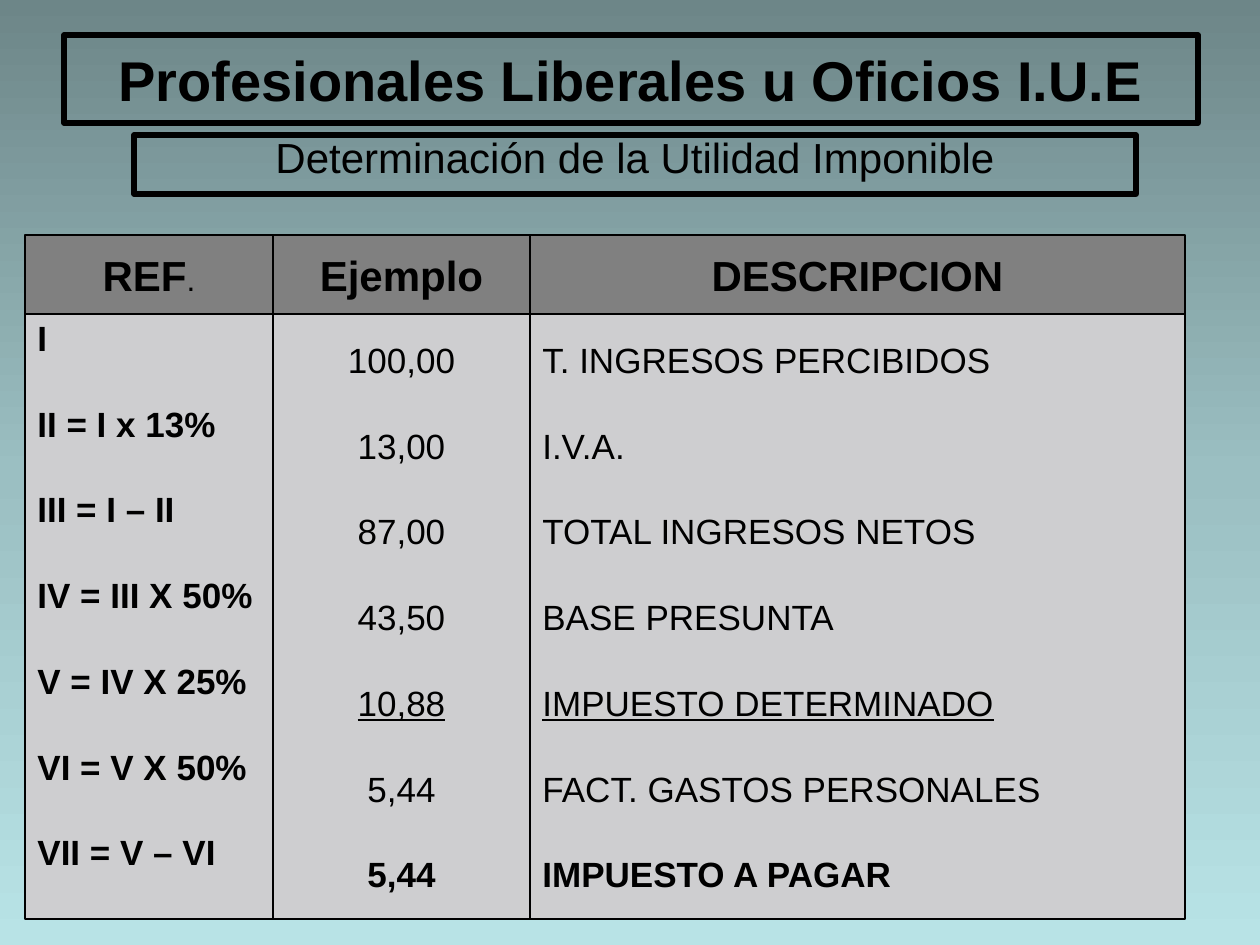
"""Build the slide that works out the taxable profit of independent professionals."""
from copy import deepcopy
from dataclasses import dataclass

from pptx import Presentation
from pptx import util as u
from pptx.dml.color import RGBColor
from pptx.enum import shapes, text
from pptx.oxml.ns import qn
from pptx.oxml.xmlchemy import OxmlElement

PX = 914400 / 126


@dataclass(frozen=True)
class Theme:
    font: str = "Arial"
    ink: str = "000000"
    header: str = "808080"
    panel: str = "CECED0"
    background: tuple = ("6D8688", "9BBFC2", "B8E3E6")
    title: int = 32
    heading: int = 24
    body: int = 20
    small: int = 18
    row_gap: int = 25
    frame: float = 3
    rule: float = 0.75


@dataclass(frozen=True)
class Run:
    text: str
    size: int
    bold: bool = False
    underline: bool = False


@dataclass(frozen=True)
class Box:
    left: int
    top: int
    width: int
    height: int


@dataclass(frozen=True)
class Column:
    left: int
    width: int
    heading: list
    rows: list
    align: text.PP_ALIGN
    bottom_inset: int = 6


T = Theme()
CENTER, LEFT = text.PP_ALIGN.CENTER, text.PP_ALIGN.LEFT
HEADER_TOP, HEADER_HEIGHT, BODY_HEIGHT = 235, 79, 605


def px(n: int) -> u.Emu:
    return u.Emu(round(n * PX))


def value_rows(*values: str) -> list:
    """Return plain rows with the fifth underlined and the last bold."""
    return [Run(v, T.body, i == len(values), i == 5) for i, v in enumerate(values, 1)]


COLUMNS = [
    Column(25, 248, [Run("REF", T.heading, True), Run(".", T.small)],
           [Run(v, T.body, True) for v in (
               "I", "II = I x 13%", "III = I – II", "IV = III X 50%",
               "V = IV X 25%", "VI = V X 50%", "VII = V – VI")],
           LEFT, 50),
    Column(273, 257, [Run("Ejemplo", T.heading, True)],
           value_rows("100,00", "13,00", "87,00", "43,50", "10,88", "5,44", "5,44"), CENTER),
    Column(530, 655, [Run("DESCRIPCION", T.heading, True)],
           value_rows("T. INGRESOS PERCIBIDOS", "I.V.A.", "TOTAL INGRESOS NETOS",
                      "BASE PRESUNTA", "IMPUESTO DETERMINADO",
                      "FACT. GASTOS PERSONALES", "IMPUESTO A PAGAR"), LEFT),
]


def outline(sp, width: float) -> None:
    sp.line.color.rgb = RGBColor.from_string(T.ink)
    sp.line.width = u.Pt(width)


def write(sp, paragraphs: list, align: text.PP_ALIGN, anchor: text.MSO_ANCHOR) -> None:
    """Fill a shape with paragraphs, each given as a list of runs."""
    tf = sp.text_frame
    tf.word_wrap = True
    tf.auto_size = text.MSO_AUTO_SIZE.NONE
    tf.vertical_anchor = anchor
    for i, runs in enumerate(paragraphs):
        p = tf.add_paragraph() if i else tf.paragraphs[0]
        p.alignment = align
        if i:
            p.space_before = u.Pt(T.row_gap)
        for run in runs:
            r = p.add_run()
            r.text = run.text
            r.font.name = T.font
            r.font.size = u.Pt(run.size)
            r.font.bold = run.bold
            r.font.underline = run.underline
            r.font.color.rgb = RGBColor.from_string(T.ink)


def place(sp, box: Box) -> None:
    sp.left, sp.top = px(box.left), px(box.top)
    sp.width, sp.height = px(box.width), px(box.height)


def add_panel(s, box: Box, fill: str, paragraphs: list, align: text.PP_ALIGN):
    """Draw one ruled, filled rectangle with text."""
    sp = s.shapes.add_shape(shapes.MSO_SHAPE.RECTANGLE, 0, 0, 0, 0)
    place(sp, box)
    sp.shadow.inherit = False
    sp.fill.solid()
    sp.fill.fore_color.rgb = RGBColor.from_string(fill)
    outline(sp, T.rule)
    write(sp, paragraphs, align, text.MSO_ANCHOR.MIDDLE)
    return sp


def add_column(s, col: Column) -> None:
    """Draw a column's rows and its heading."""
    body = Box(col.left, HEADER_TOP + HEADER_HEIGHT, col.width, BODY_HEIGHT)
    sp = add_panel(s, body, T.panel, [[row] for row in col.rows], col.align)
    sp.text_frame.margin_bottom = px(col.bottom_inset)
    header = Box(col.left, HEADER_TOP, col.width, HEADER_HEIGHT)
    add_panel(s, header, T.header, [col.heading], CENTER)


def paint_background(s) -> None:
    """Fill the background with evenly spaced stops from top to bottom."""
    fill = s.background.fill
    fill.gradient()
    fill.gradient_angle = 270
    stops = s.element.find(".//" + qn("a:gsLst"))
    stops.insert(1, deepcopy(stops[0]))
    for i, (stop, color) in enumerate(zip(fill.gradient_stops, T.background)):
        stop.position = i / (len(T.background) - 1)
        stop.color.rgb = RGBColor.from_string(color)


def add_titles(s) -> None:
    """Fill the framed title and subtitle placeholders."""
    title, subtitle = s.shapes.title, s.placeholders[1]
    place(title, Box(64, 35, 1134, 88))
    place(subtitle, Box(134, 135, 1002, 59))
    for sp in (title, subtitle):
        outline(sp, T.frame)
    write(title, [[Run("Profesionales Liberales u Oficios I.U.E", T.title, True)]],
          CENTER, text.MSO_ANCHOR.MIDDLE)
    write(subtitle, [[Run("Determinación de la Utilidad Imponible", T.heading)]],
          CENTER, text.MSO_ANCHOR.TOP)
    p = subtitle.text_frame.paragraphs[0]
    p.line_spacing = 0.8
    props = p._p.get_or_add_pPr()
    props.set("marL", "0")
    props.set("indent", "0")
    props.append(OxmlElement("a:buNone"))


def main() -> None:
    prs = Presentation()
    prs.slide_width, prs.slide_height = px(1260), px(945)
    s = prs.slides.add_slide(prs.slide_layouts[1])
    paint_background(s)
    add_titles(s)
    for col in COLUMNS:
        add_column(s, col)
    prs.save("out.pptx")


if __name__ == "__main__":
    main()
